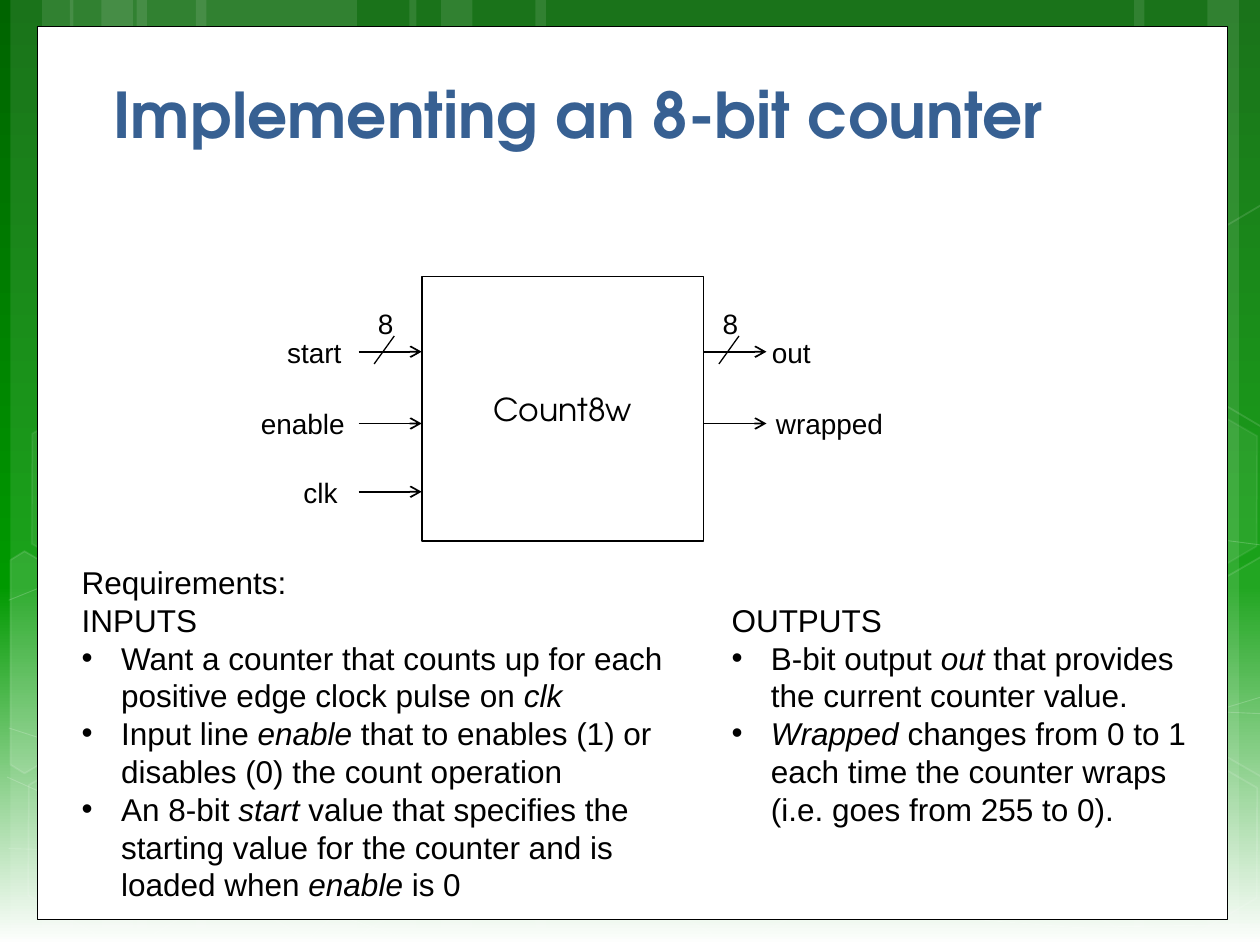
from dataclasses import dataclass

from lxml.etree import SubElement
from pptx import Presentation
from pptx.dml.color import RGBColor
from pptx.enum.shapes import MSO_CONNECTOR, MSO_SHAPE
from pptx.enum.text import MSO_ANCHOR, PP_ALIGN
from pptx.oxml.ns import qn
from pptx.util import Pt


@dataclass(frozen=True)
class Theme:
    white: str = "FFFFFF"
    black: str = "000000"
    blue: str = "376092"
    fade: tuple = ((0, "006400"), (62, "009900"), (100, "FFFFFF"))
    head: str = "TeX Gyre Adventor"
    body: str = "Arial"
    title: int = 36
    text: int = 18
    label: int = 16
    pitch: float = 1.2


THEME = Theme()

BANDS = [(x + shift, wide) for shift in (0, 34)
         for x, wide in ((78, 126), (6, 36), (24, 60))]
BANDS += [(528, 126), (690, 36), (648, 60), (306, 222), (234, 36), (252, 60)]

CURVES = [
    [(5, 485), (137, 488), (330, 479), (570, 444), (725, 397)],
    [(5, 343), (87, 310), (250, 279), (471, 279), (725, 312)],
    [(4, 444), (91, 483), (160, 512), (240, 539)],
    [(5, 416), (92, 444), (257, 485), (452, 517), (614, 530), (725, 528)],
    [(174, 539), (217, 498), (279, 460), (338, 438), (438, 416),
     (490, 410), (572, 405), (638, 404), (724, 408)],
]

HEXES = [(358, 424, 6, 12), (8, 425.5, 0, 12), (10, 224.6, 7, 8),
         (125.3, 426, 0, 12), (600.5, 427, 0, 12), (600.5, 226, 7, 8)]

SHARDS = [
    ([(6, 320), (14, 315), (69, 347), (68, 410), (14, 442), (6, 437)], 10),
    ([(667, 349), (721, 318), (726, 321), (726, 441), (721, 444), (667, 413)], 4),
    ([(667, 149), (721, 117), (727, 121), (726, 241), (721, 244), (667, 212)], 0),
]

INPUTS = [
    "Want a counter that counts up for each positive edge clock pulse on *clk*",
    "Input line *enable* that to enables (1) or disables (0) the count operation",
    "An 8-bit *start* value that specifies the starting value for the counter "
    "and is loaded when *enable* is 0",
]
OUTPUTS = [
    "B-bit output *out* that provides the current counter value.",
    "*Wrapped* changes from 0 to 1 each time the counter wraps "
    "(i.e. goes from 255 to 0).",
]


def paint(fill, color, alpha=100):
    if not alpha:
        fill.background()
        return
    fill.solid()
    fill.fore_color.rgb = RGBColor.from_string(color)


def thin(shape, alpha, tag):
    root = shape.element.spPr
    if tag == "a:ln":
        root = root.find(qn(tag))
    tint = root.find(qn("a:solidFill"))
    if tint is not None and alpha < 100:
        SubElement(tint[0], qn("a:alpha"), val=str(alpha * 1000))


def style(shape, fill=100, width=0, edge=100, ink=THEME.black):
    shape.shadow.inherit = False
    paint(shape.fill, THEME.white, fill)
    thin(shape, fill, "a:spPr")
    if width:
        shape.line.width = Pt(width)
        paint(shape.line.fill, ink)
        thin(shape, edge, "a:ln")
    else:
        shape.line.fill.background()
    return shape


def box(slide, kind, area, **look):
    shape = slide.shapes.add_shape(kind, *map(Pt, area))
    return style(shape, **look)


def trace(slide, dots, close=False, **look):
    first, *rest = [(Pt(x), Pt(y)) for x, y in dots]
    pen = slide.shapes.build_freeform(*first)
    pen.add_line_segments(rest, close=close)
    return style(pen.convert_to_shape(), **look)


def wire(slide, start, end, width=1, arrow=False):
    line = slide.shapes.add_connector(
        MSO_CONNECTOR.STRAIGHT, *map(Pt, start + end))
    line.line.width = Pt(width)
    paint(line.line.fill, THEME.black)
    root = line.element.spPr
    if arrow:
        SubElement(root.find(qn("a:ln")), qn("a:tailEnd"), type="arrow")
    SubElement(root, qn("a:effectLst"))


def write(frame, text, size=THEME.text, font=THEME.body, color=THEME.black,
          bold=False, align=PP_ALIGN.LEFT, anchor=MSO_ANCHOR.TOP,
          wrap=True, pitch=None, plain=99):
    frame.word_wrap = wrap
    frame.vertical_anchor = anchor
    for row, line in enumerate(text.split("\n")):
        para = frame.paragraphs[0] if row == 0 else frame.add_paragraph()
        para.alignment = align
        if pitch:
            para.line_spacing = Pt(round(size * pitch, 1))
        if row >= plain:
            props = para._p.get_or_add_pPr()
            props.set("marL", str(Pt(22.5)))
            props.set("indent", str(-Pt(22.5)))
            SubElement(props, qn("a:buFont"), typeface="Arial")
            SubElement(props, qn("a:buChar"), char="•")
        for turn, part in enumerate(line.split("*")):
            if part:
                run = para.add_run()
                run.text = part
                run.font.size = Pt(size)
                run.font.name = font
                run.font.bold = bold
                run.font.italic = turn % 2 == 1
                run.font.color.rgb = RGBColor.from_string(color)


def note(slide, area, text, **form):
    write(slide.shapes.add_textbox(*map(Pt, area)).text_frame, text, **form)


def label(slide, left, top, wide, text):
    note(slide, (left, top, wide, 26.6), text, size=THEME.label,
         wrap=False, pitch=THEME.pitch)


def backdrop(slide):
    fill = slide.background.fill
    fill.gradient()
    fill.gradient_angle = 270
    stops = next(slide.element.iter(qn("a:gsLst")))
    for stop in list(stops):
        stops.remove(stop)
    for place, color in THEME.fade:
        stop = SubElement(stops, qn("a:gs"), pos=str(place * 1000))
        SubElement(stop, qn("a:srgbClr"), val=color)
    for left, wide in BANDS:
        box(slide, MSO_SHAPE.RECTANGLE, (left, 0, wide, 540), fill=10)
    for dots in CURVES:
        trace(slide, dots, fill=0, width=0.5, edge=20, ink=THEME.white)
    for left, top, fill, edge in HEXES:
        tile = box(slide, MSO_SHAPE.HEXAGON, (left, top, 126, 109.4),
                   fill=fill, width=1, edge=edge, ink=THEME.white)
        tile.adjustments[0] = 0.285
        tile.rotation = 30
    for dots, fill in SHARDS:
        trace(slide, dots, close=True, fill=fill, width=1, edge=12,
              ink=THEME.white)
    box(slide, MSO_SHAPE.RECTANGLE, (21.6, 15.1, 679.7, 510.5), width=0.5)


def diagram(slide):
    block = box(slide, MSO_SHAPE.RECTANGLE, (241, 158, 161, 151), width=1)
    write(block.text_frame, "Count8w", font=THEME.head,
          align=PP_ALIGN.CENTER, anchor=MSO_ANCHOR.MIDDLE)
    rows = (201, 242, 281)
    ports = [(205, 157, 46, "start"), (205, 142, 62.6, "enable"),
             (205, 166.3, 34.6, "clk")]
    exits = [(402, 434, 36.7, "out"), (402, 436.3, 76.3, "wrapped")]
    for side in (ports, exits):
        for y, (x, left, wide, name) in zip(rows, side):
            wire(slide, (x, y), (x + 36, y), arrow=True)
            label(slide, left, y - 13, wide, name)
        x, y = side[0][0], rows[0]
        wire(slide, (x + 20.3, y - 9), (x + 8.8, y + 7), width=0.75)
        label(slide, x + 3.8, y - 29.6, 23.8, "8")


def main():
    deck = Presentation()
    deck.slide_width, deck.slide_height = Pt(720), Pt(540)
    slide = deck.slides.add_slide(deck.slide_layouts[6])
    backdrop(slide)
    note(slide, (57.6, 35.3, 606, 54.7), "Implementing an 8-bit counter",
         size=THEME.title, font=THEME.head, color=THEME.blue, bold=True,
         anchor=MSO_ANCHOR.BOTTOM)
    diagram(slide)
    note(slide, (39.6, 318.2, 365, 203.8),
         "\n".join(["Requirements:", "INPUTS"] + INPUTS),
         pitch=THEME.pitch, plain=2)
    note(slide, (411, 339.8, 280, 160), "\n".join(["OUTPUTS"] + OUTPUTS),
         pitch=THEME.pitch, plain=1)
    deck.save("out.pptx")


if __name__ == "__main__":
    main()
